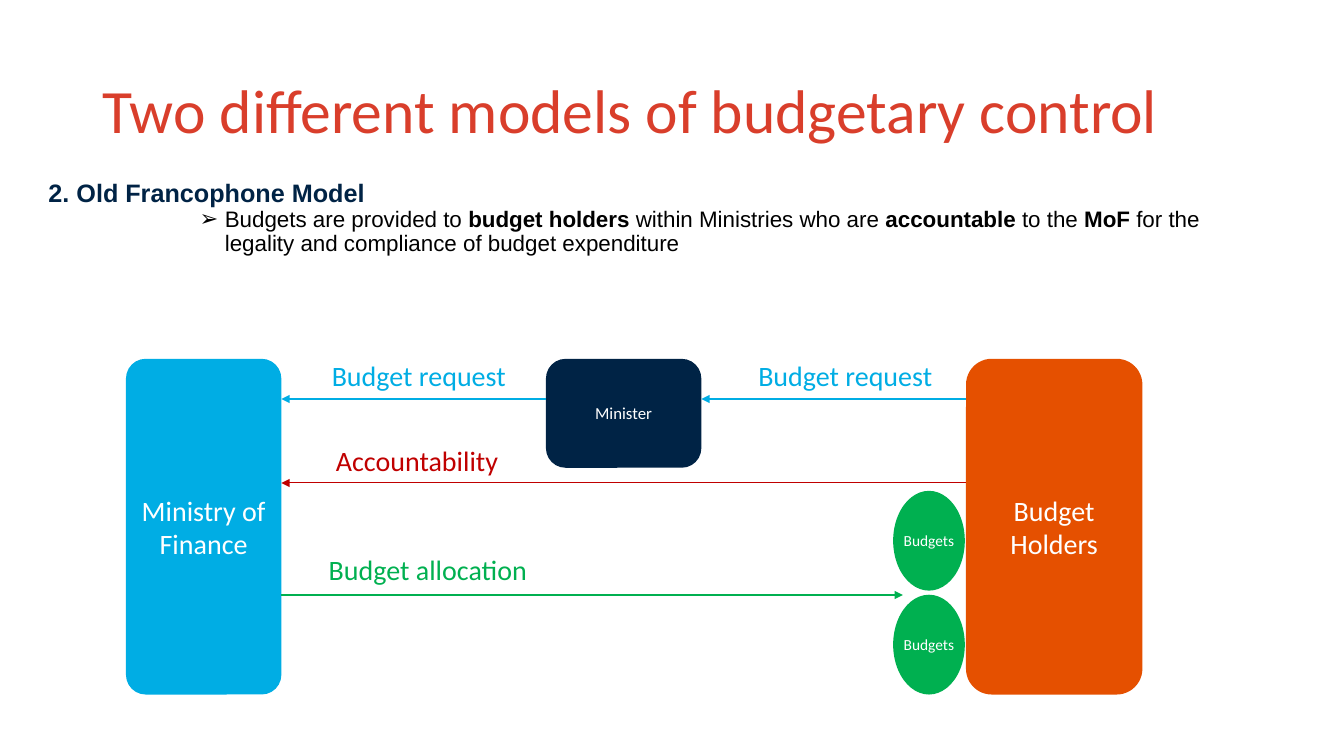
"""Build the slide on the old Francophone model of budgetary control."""
from typing import Any, NamedTuple

from lxml import etree
from pptx import Presentation
from pptx import util as u
from pptx.dml.color import RGBColor
from pptx.enum import shapes, text
from pptx.oxml import ns

COLORS = {
    "title": "D93E2B", "navy": "002345", "black": "000000", "white": "FFFFFF",
    "orange": "E55000", "blue": "00ADE4", "green": "00B050", "red": "C00000",
}
ROUND, OVAL = shapes.MSO_SHAPE.ROUNDED_RECTANGLE, shapes.MSO_SHAPE.OVAL
MOF_RIGHT, MINISTER_LEFT, MINISTER_RIGHT, HOLDERS_LEFT = 201, 390, 501, 690
REQUEST_Y, ACCOUNT_Y, ALLOCATION_Y = 285, 345, 425
BOX_TOP, BOX_HEIGHT = 256.3, 239.8


class Node(NamedTuple):
    lines: tuple[str, ...]
    kind: Any
    at: tuple[float, float, float, float]
    color: str
    size: float
    inset: float = 3
    adj: float | None = None


class Arrow(NamedTuple):
    start: float
    end: float
    y: float
    color: str


class Label(NamedTuple):
    words: str
    left: float
    top: float
    width: float
    color: str
    wrap: bool = True


NODES = [
    Node(("Budget", "Holders"), ROUND, (HOLDERS_LEFT, BOX_TOP, 126, BOX_HEIGHT), "orange", 20, adj=0.146),
    Node(("Minister",), ROUND, (MINISTER_LEFT, BOX_TOP, 111, 77.8), "navy", 12, adj=0.18),
    Node(("Ministry of Finance",), ROUND, (90, BOX_TOP, 111, BOX_HEIGHT), "blue", 20, adj=0.127),
    *(Node(("Budgets",), OVAL, (638, top, 51.2, 71.3), "green", 11, 0)
      for top in (350.6, 424.8)),
]
ARROWS = [
    Arrow(HOLDERS_LEFT, MINISTER_RIGHT, REQUEST_Y, "blue"),
    Arrow(MINISTER_LEFT, MOF_RIGHT, REQUEST_Y, "blue"),
    Arrow(HOLDERS_LEFT, MOF_RIGHT, ACCOUNT_Y, "red"),
    Arrow(MOF_RIGHT, 645, ALLOCATION_Y, "green"),
]
LABELS = [
    Label("Budget request", 538.6, 252.7, 142, "blue"),
    Label("Accountability", 236.9, 313.9, 139, "red"),
    Label("Budget request", 234, 252.7, 136, "blue", False),
    Label("Budget allocation", 231.8, 391.7, 237, "green"),
]
DUTIES = [
    ("Budgets are provided to ", False), ("budget holders", True),
    (" within Ministries who are ", False), ("accountable", True),
    (" to the ", False), ("MoF", True),
    (" for the legality and compliance of budget expenditure", False),
]


def rgb(color: str) -> RGBColor:
    """Look up a named colour."""
    return RGBColor.from_string(COLORS[color])


def apply(target: Any, values: dict[str, Any]) -> None:
    """Set each attribute in values on target."""
    for name, value in values.items():
        setattr(target, name, value)


def add_run(p: Any, words: str, size: float, color: str,
            name: str = "Calibri", bold: bool = False) -> None:
    """Append a formatted run to a paragraph."""
    r = p.add_run()
    r.text = words
    apply(r.font, {"size": u.Pt(size), "name": name, "bold": bold})
    r.font.color.rgb = rgb(color)


def set_frame(tf: Any, inset: float, wrap: bool = True) -> None:
    """Centre text vertically with equal insets."""
    sides = ("left", "top", "right", "bottom")
    apply(tf, {f"margin_{side}": u.Pt(inset) for side in sides})
    apply(tf, {"word_wrap": wrap, "vertical_anchor": text.MSO_ANCHOR.MIDDLE})


def place(sp: Any, left: float, top: float, width: float, height: float) -> None:
    """Move and size a placeholder."""
    apply(sp, {"left": u.Pt(left), "top": u.Pt(top),
               "width": u.Pt(width), "height": u.Pt(height)})


def set_bullet(p: Any, margin: float, indent: float, char: str = "") -> None:
    """Set the indents and bullet of a paragraph."""
    pr = p._p.get_or_add_pPr()
    pr.set("marL", str(u.Pt(margin)))
    pr.set("indent", str(u.Pt(indent)))
    if char:
        etree.SubElement(pr, ns.qn("a:buFont"), typeface="Arial")
        etree.SubElement(pr, ns.qn("a:buChar"), char=char)
    else:
        etree.SubElement(pr, ns.qn("a:buNone"))


def fill_title(sp: Any) -> None:
    """Place and write the title."""
    place(sp, 66, 28.8, 828, 104.4)
    tf = sp.text_frame
    apply(tf, {"auto_size": text.MSO_AUTO_SIZE.NONE,
               "vertical_anchor": text.MSO_ANCHOR.MIDDLE})
    p = tf.paragraphs[0]
    apply(p, {"alignment": text.PP_ALIGN.LEFT, "line_spacing": 0.9})
    add_run(p, "Two different models of budgetary control", 44, "title")


def fill_body(sp: Any) -> None:
    """Place and write the heading and its bullet."""
    place(sp, 27.4, 120.2, 886.3, 105.1)
    tf = sp.text_frame
    tf.auto_size = text.MSO_AUTO_SIZE.NONE
    p = tf.paragraphs[0]
    set_bullet(p, 0, 0)
    apply(p, {"line_spacing": 1.14, "space_before": u.Pt(0)})
    add_run(p, "2. Old Francophone Model", 18, "navy", "Arial", True)
    p = tf.add_paragraph()
    set_bullet(p, 126, -18, "➢")
    apply(p, {"level": 3, "line_spacing": 0.9, "space_before": u.Pt(0)})
    for words, bold in DUTIES:
        add_run(p, words, 16, "black", "Arial", bold)


def add_node(s: Any, node: Node) -> None:
    """Draw a filled shape with centred text."""
    sp = s.shapes.add_shape(node.kind, *map(u.Pt, node.at))
    sp.shadow.inherit = False
    sp.fill.solid()
    sp.fill.fore_color.rgb = rgb(node.color)
    sp.line.fill.background()
    if node.adj is not None:
        sp.adjustments[0] = node.adj
    tf = sp.text_frame
    set_frame(tf, node.inset)
    for i, words in enumerate(node.lines):
        p = tf.add_paragraph() if i else tf.paragraphs[0]
        p.alignment = text.PP_ALIGN.CENTER
        add_run(p, words, node.size, "white")


def add_arrow(s: Any, arrow: Arrow) -> None:
    """Draw a horizontal arrow."""
    ends = (arrow.start, arrow.y, arrow.end, arrow.y)
    sp = s.shapes.add_connector(shapes.MSO_CONNECTOR.STRAIGHT, *map(u.Pt, ends))
    sp.line.width = u.Pt(0.75)
    sp.line.color.rgb = rgb(arrow.color)
    pr = sp._element.spPr
    etree.SubElement(pr.find(ns.qn("a:ln")), ns.qn("a:tailEnd"), type="triangle")
    etree.SubElement(pr, ns.qn("a:effectLst"))


def add_label(s: Any, label: Label) -> None:
    """Write a label above an arrow."""
    at = (label.left, label.top, label.width, 30.2)
    tf = s.shapes.add_textbox(*map(u.Pt, at)).text_frame
    set_frame(tf, 3, label.wrap)
    tf.auto_size = text.MSO_AUTO_SIZE.SHAPE_TO_FIT_TEXT
    add_run(tf.paragraphs[0], label.words, 20, label.color)


def main() -> None:
    """Build and save the presentation."""
    prs = Presentation()
    apply(prs, {"slide_width": u.Pt(960), "slide_height": u.Pt(540)})
    s = prs.slides.add_slide(prs.slide_layouts[1])
    fill_title(s.shapes.title)
    fill_body(s.placeholders[1])
    for node in NODES:
        add_node(s, node)
    for arrow in ARROWS:
        add_arrow(s, arrow)
    for label in LABELS:
        add_label(s, label)
    prs.save("out.pptx")


if __name__ == "__main__":
    main()
